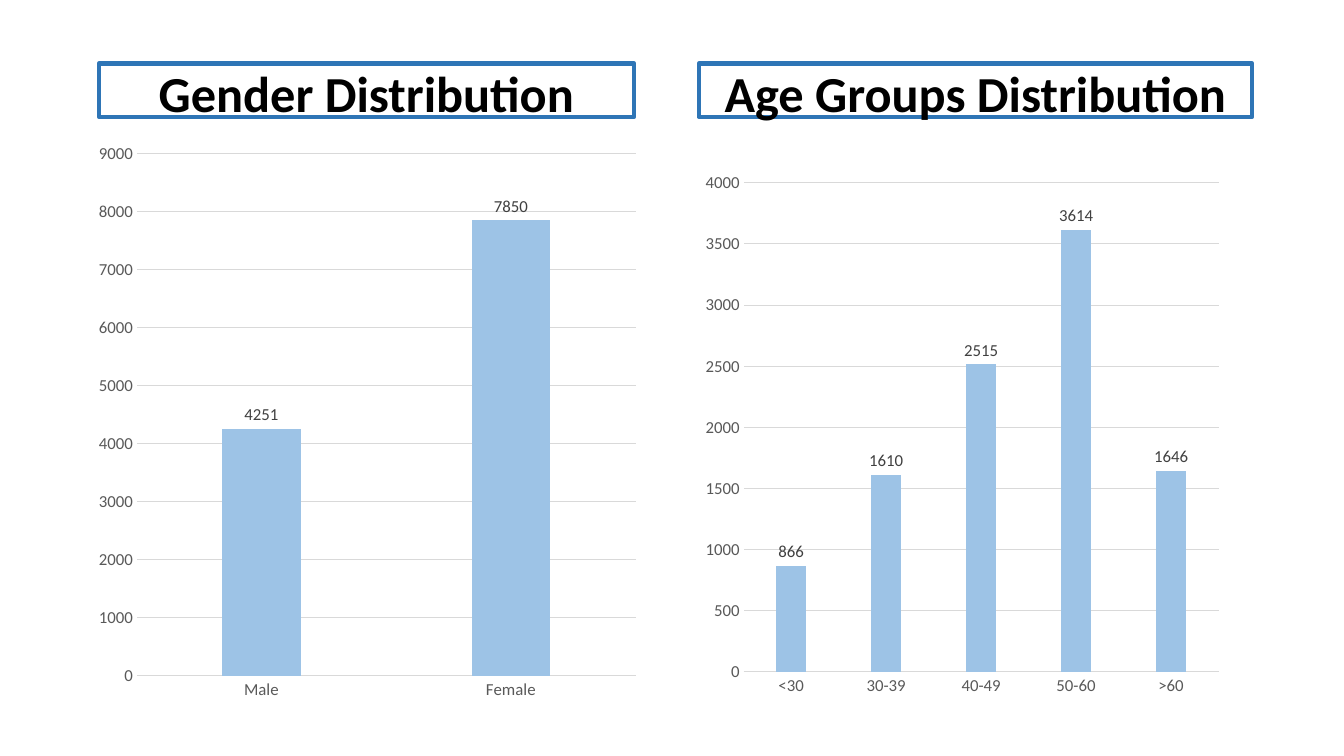
from lxml.etree import SubElement
from pptx import Presentation
from pptx.chart.data import CategoryChartData as ChartData
from pptx.dml.color import RGBColor
from pptx.enum.chart import XL_CHART_TYPE as ChartKind
from pptx.enum.chart import XL_LABEL_POSITION as LabelPlace
from pptx.enum.chart import XL_TICK_MARK as Tick
from pptx.enum.text import MSO_ANCHOR as Anchor
from pptx.enum.text import MSO_AUTO_SIZE as AutoSize
from pptx.enum.text import PP_ALIGN as Align
from pptx.oxml.ns import qn
from pptx.util import Emu, Pt

SCALE = 9144
COLOURS = {
    "text": "000000",
    "axis": "595959",
    "label": "404040",
    "grid": "D9D9D9",
    "bar": "9DC3E6",
    "frame": "2E75B6",
}


def px(length):
    return Emu(length * SCALE)


def colour(name):
    return RGBColor.from_string(COLOURS[name])


def format_font(font, size, tint, face="Calibri", bold=False):
    font.name = face
    font.size = Pt(size)
    font.bold = bold
    font.color.rgb = colour(tint)


def write_text(frame, text, size=36, tint="text", bold=True, align=Align.CENTER, spacing=0.9):
    para = frame.paragraphs[0]
    para.alignment = align
    para.line_spacing = spacing
    para.space_before = Pt(0)
    span = para.add_run()
    span.text = text
    format_font(span.font, size, tint, bold=bold)


class ChartPage:
    def __init__(self, deck):
        self.page = deck.slides.add_slide(deck.slide_layouts[4])
        self.fields = {box.placeholder_format.idx: box for box in self.page.placeholders}

    def heading(self, field, text, area):
        box = self.fields.pop(field)
        box.left, box.top, box.width, box.height = map(px, area)
        box.fill.background()
        box.line.color.rgb = colour("frame")
        box.line.width = Pt(3)
        frame = box.text_frame
        frame.word_wrap = True
        frame.auto_size = AutoSize.NONE
        frame.vertical_anchor = Anchor.TOP
        write_text(frame, text)

    def columns(self, values, area, plot_area, top, step, overlap=0):
        data = ChartData()
        data.categories = list(values)
        data.add_series("Series 1", list(values.values()))
        chart = self.page.shapes.add_chart(
            ChartKind.COLUMN_CLUSTERED, *map(px, area), data
        ).chart
        chart.has_title = False
        chart.has_legend = False
        format_font(chart.font, 10, "text")

        plot = chart.plots[0]
        plot.vary_by_categories = False
        plot.gap_width = 219
        plot.overlap = overlap
        bars = plot.series[0]
        bars.format.fill.solid()
        bars.format.fill.fore_color.rgb = colour("bar")
        labels = bars.data_labels
        labels.show_value = True
        labels.position = LabelPlace.OUTSIDE_END
        format_font(labels.font, 12, "label")

        scale = chart.value_axis
        scale.minimum_scale, scale.maximum_scale, scale.major_unit = 0, top, step
        scale.format.line.fill.background()
        scale.has_major_gridlines = True
        for axis in (chart.category_axis, scale):
            axis.major_tick_mark = axis.minor_tick_mark = Tick.NONE
            format_font(axis.tick_labels.font, 12, "axis")
        for line in (chart.category_axis.format.line, scale.major_gridlines.format.line):
            line.color.rgb = colour("grid")
            line.width = Pt(0.75)
        self.place_plot(chart, plot_area)

    def place_plot(self, chart, plot_area):
        holder = chart.element.find(".//" + qn("c:plotArea"))
        layout = holder.find(qn("c:layout"))
        if layout is None:
            layout = SubElement(holder, qn("c:layout"))
            holder.insert(0, layout)
        manual = SubElement(layout, qn("c:manualLayout"))
        settings = [("layoutTarget", "inner"), ("xMode", "edge"), ("yMode", "edge")]
        settings += zip("xywh", plot_area)
        for name, value in settings:
            SubElement(manual, qn("c:" + name)).set("val", str(value))

    def drop_empty_fields(self):
        for box in self.fields.values():
            box.element.getparent().remove(box.element)


def main():
    deck = Presentation()
    deck.slide_width, deck.slide_height = px(1333), px(750)
    page = ChartPage(deck)
    page.columns(
        {"<30": 866, "30-39": 1610, "40-49": 2515, "50-60": 3614, ">60": 1646},
        (686, 116, 549, 601), (0.094, 0.109, 0.858, 0.807), top=4000, step=500,
    )
    page.columns(
        {"Male": 4251, "Female": 7850},
        (80, 142, 568, 575), (0.098, 0.018, 0.871, 0.901), top=9000, step=1000, overlap=-27,
    )
    page.heading(1, "Gender Distribution", (98, 63, 531, 53))
    page.heading(3, "Age Groups Distribution", (693, 63, 549, 53))
    page.drop_empty_fields()
    deck.save("out.pptx")


if __name__ == "__main__":
    main()
